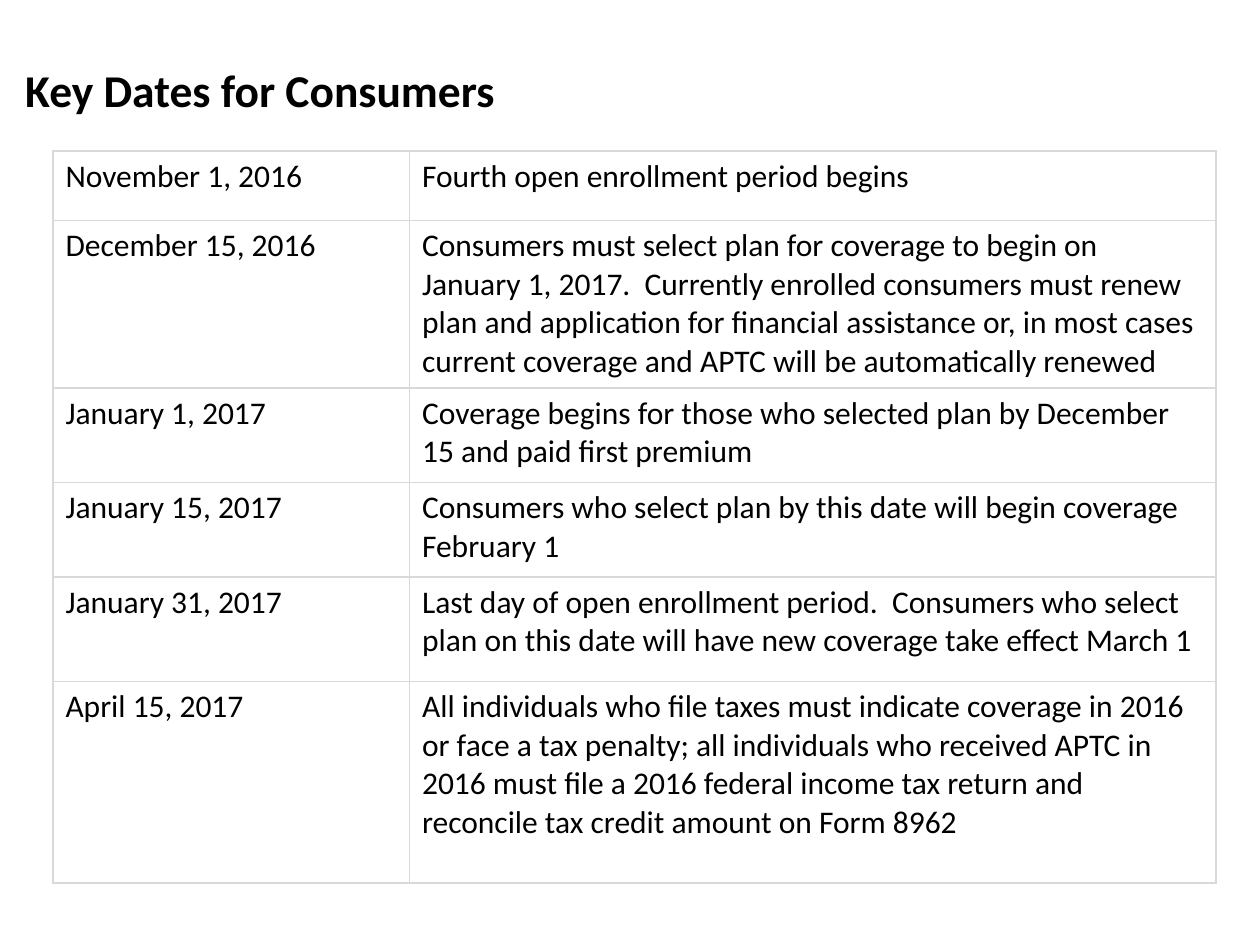
from lxml import etree
from pptx import Presentation
from pptx.dml.color import RGBColor
from pptx.enum.text import MSO_ANCHOR, PP_ALIGN
from pptx.oxml.ns import qn
from pptx.util import Inches, Pt

TOP, LEFT = MSO_ANCHOR.TOP, PP_ALIGN.LEFT
TITLE_ONLY = 5
COLORS = {"text": "000000", "background": "FFFFFF", "border": "D9D9D9"}
TITLE_FONT = {"name": "Calibri", "size": Pt(26), "bold": True}
CELL_FONT = {"name": "Calibri", "size": Pt(18), "bold": False}

COLUMN_WIDTHS = [2.83, 6.4]
ROW_HEIGHTS = [0.55, 1.33, 0.75, 0.75, 0.83, 1.6]
KEY_DATES = [
    ("November 1, 2016", "Fourth open enrollment period begins"),
    ("December 15, 2016",
     "Consumers must select plan for coverage to begin on January 1, 2017.  "
     "Currently enrolled consumers must renew plan and application for financial "
     "assistance or, in most cases current coverage and APTC will be "
     "automatically renewed"),
    ("January 1, 2017",
     "Coverage begins for those who selected plan by December 15 and paid "
     "first premium"),
    ("January 15, 2017",
     "Consumers who select plan by this date will begin coverage February 1"),
    ("January 31, 2017",
     "Last day of open enrollment period.  Consumers who select plan on this "
     "date will have new coverage take effect March 1"),
    ("April 15, 2017",
     "All individuals who file taxes must indicate coverage in 2016 or face a "
     "tax penalty; all individuals who received APTC in 2016 must file a 2016 "
     "federal income tax return and reconcile tax credit amount on Form 8962"),
]


class SlideBuilder:
    def __init__(self, slide, colors):
        self.s = slide
        self.colors = {name: RGBColor.from_string(c) for name, c in colors.items()}

    def background(self):
        fill = self.s.background.fill
        fill.solid()
        fill.fore_color.rgb = self.colors["background"]

    def add_text(self, tf, text, font):
        p = tf.paragraphs[0]
        p.alignment = LEFT
        r = p.add_run()
        r.text = text
        for name, value in font.items():
            setattr(r.font, name, value)
        r.font.color.rgb = self.colors["text"]

    def title(self, text, left, top, width, height):
        sp = self.s.shapes.title
        sp.left, sp.top = Inches(left), Inches(top)
        sp.width, sp.height = Inches(width), Inches(height)
        tf = sp.text_frame
        tf.word_wrap = True
        tf.vertical_anchor = TOP
        tf.margin_top = Inches(0.07)
        self.add_text(tf, text, TITLE_FONT)

    def borders(self, cell):
        tc_pr = cell._tc.get_or_add_tcPr()
        for i, side in enumerate(("lnL", "lnR", "lnT", "lnB")):
            ln = etree.Element(qn(f"a:{side}"), w=str(Pt(1)))
            fill = etree.SubElement(ln, qn("a:solidFill"))
            etree.SubElement(fill, qn("a:srgbClr"), val=str(self.colors["border"]))
            tc_pr.insert(i, ln)

    def table(self, rows, left, top, widths, heights):
        frame = self.s.shapes.add_table(
            len(rows), len(widths), Inches(left), Inches(top),
            Inches(sum(widths)), Inches(sum(heights)))
        table = frame.table
        table.first_row = table.horz_banding = False
        for column, width in zip(table.columns, widths):
            column.width = Inches(width)
        for row, height, texts in zip(table.rows, heights, rows):
            row.height = Inches(height)
            for cell, text in zip(row.cells, texts):
                cell.fill.solid()
                cell.fill.fore_color.rgb = self.colors["background"]
                cell.vertical_anchor = TOP
                self.borders(cell)
                self.add_text(cell.text_frame, text, CELL_FONT)


def main():
    prs = Presentation()
    prs.slide_width, prs.slide_height = Inches(10), Inches(7.5)
    slide = SlideBuilder(prs.slides.add_slide(prs.slide_layouts[TITLE_ONLY]), COLORS)

    # Background and title
    slide.background()
    slide.title("Key Dates for Consumers", 0.1, 0.42, 9.8, 0.75)

    # Dates and what happens on each
    slide.table(KEY_DATES, 0.42, 1.2, COLUMN_WIDTHS, ROW_HEIGHTS)

    prs.save("out.pptx")


if __name__ == "__main__":
    main()
